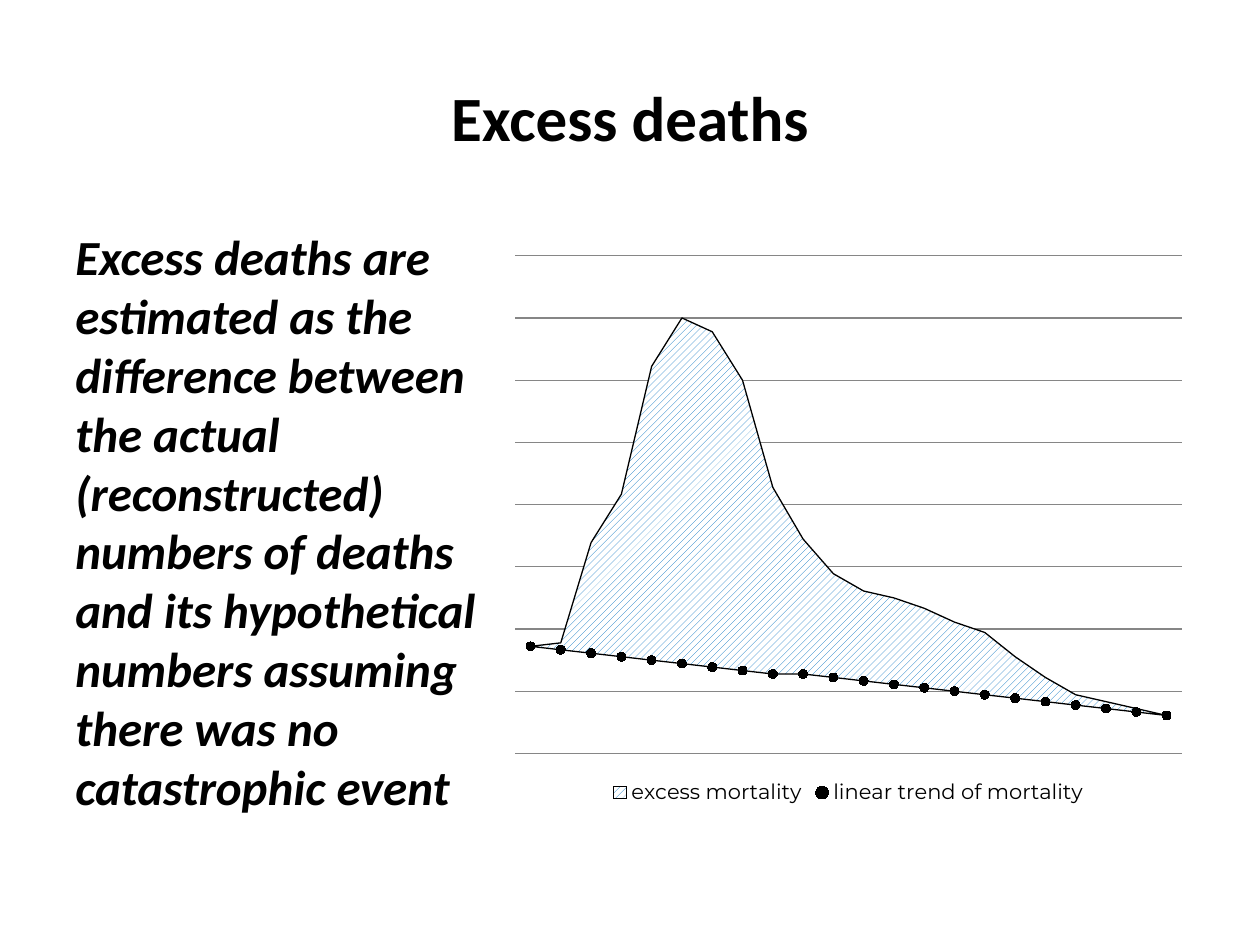
import pptx
import pptx.chart.data
import pptx.dml.color
import pptx.enum.chart
import pptx.enum.dml
import pptx.enum.text
import pptx.oxml
import pptx.oxml.ns
import pptx.util
from pptx.util import Inches

BLACK = pptx.dml.color.RGBColor(0x00, 0x00, 0x00)
WHITE = pptx.dml.color.RGBColor(0xFF, 0xFF, 0xFF)
HATCH_BLUE = pptx.dml.color.RGBColor(0x00, 0x70, 0xC0)
GRID_GRAY = pptx.dml.color.RGBColor(0x86, 0x86, 0x86)
CHART_NS = pptx.oxml.ns.nsdecls("c")

TREND = [*range(31, 22, -1), *range(23, 10, -1)]
EXCESS = [0, 2, 32, 47, 85, 100, 97, 84, 54, 39, 30,
          26, 25, 23, 20, 18, 12, 7, 3, 2, 1, 0]
GRID_STEP = 18
GRID_INTERVALS = 8


class SlideBuilder:
    text_font = "Calibri"
    legend_font = "Montserrat"

    def __init__(self, slide):
        self.slide = slide

    def text(self, wording, left, top, width, height, size, *, italic=False,
             align=pptx.enum.text.PP_ALIGN.LEFT,
             anchor=pptx.enum.text.MSO_ANCHOR.TOP):
        frame = self.slide.shapes.add_textbox(left, top, width, height).text_frame
        frame.word_wrap = True
        frame.vertical_anchor = anchor
        frame.text = wording
        paragraph = frame.paragraphs[0]
        paragraph.alignment = align
        font = paragraph.runs[0].font
        font.name = self.text_font
        font.size = pptx.util.Pt(size)
        font.bold = True
        font.italic = italic
        font.color.rgb = BLACK

    def mortality_chart(self, left, top, width, height):
        mortality = pptx.chart.data.CategoryChartData()
        mortality.categories = [str(n) for n in range(1, len(TREND) + 1)]
        mortality.add_series("Series 1", TREND)
        mortality.add_series("excess mortality", EXCESS)
        mortality.add_series("linear trend of mortality", TREND)
        chart = self.slide.shapes.add_chart(
            pptx.enum.chart.XL_CHART_TYPE.AREA_STACKED,
            left, top, width, height, mortality).chart
        chart.has_title = False
        chart.font.name = self.text_font
        chart.font.size = pptx.util.Pt(10)
        chart.font.color.rgb = BLACK

        self.move_last_series_to_line(chart)
        areas, line = chart.plots
        areas.vary_by_categories = False
        self.style_areas(*areas.series)
        self.style_trend(line.series[0])
        self.style_axes(chart)
        self.place_plot(chart)
        self.add_legend(chart)

    @staticmethod
    def move_last_series_to_line(chart):
        """Turn the stacked chart into an area and line combination."""
        areas = chart.plots[0]
        area_xml = areas.series[0].format and chart.element.find(
            ".//" + pptx.oxml.ns.qn("c:areaChart"))
        axis_ids = "".join(
            f'<c:axId val="{axis.get("val")}"/>'
            for axis in area_xml.findall(pptx.oxml.ns.qn("c:axId")))
        line_xml = pptx.oxml.parse_xml(
            f'<c:lineChart {CHART_NS}><c:grouping val="standard"/>'
            f'<c:varyColors val="0"/><c:marker val="1"/>{axis_ids}</c:lineChart>')
        trend_xml = area_xml.findall(pptx.oxml.ns.qn("c:ser"))[-1]
        line_xml.insert(2, trend_xml)
        area_xml.addnext(line_xml)

    @staticmethod
    def style_areas(base, excess):
        base.format.fill.background()
        base.format.line.fill.background()
        hatch = excess.format.fill
        hatch.patterned()
        hatch.pattern = pptx.enum.dml.MSO_PATTERN.WIDE_UPWARD_DIAGONAL
        hatch.fore_color.rgb = HATCH_BLUE
        hatch.back_color.rgb = WHITE
        excess.format.line.color.rgb = BLACK
        excess.format.line.width = pptx.util.Pt(0.75)

    @staticmethod
    def style_trend(trend):
        trend.smooth = False
        trend.format.line.fill.background()
        trend.marker.style = pptx.enum.chart.XL_MARKER_STYLE.CIRCLE
        trend.marker.size = 5
        trend.marker.format.fill.solid()
        trend.marker.format.fill.fore_color.rgb = BLACK
        trend.marker.format.line.color.rgb = BLACK

    @staticmethod
    def style_axes(chart):
        chart.category_axis.visible = False
        chart.category_axis.has_major_gridlines = False
        values = chart.value_axis
        values.visible = False
        values.minimum_scale = 0
        values.maximum_scale = GRID_STEP * GRID_INTERVALS
        values.major_unit = GRID_STEP
        values.has_major_gridlines = True
        values.major_gridlines.format.line.color.rgb = GRID_GRAY
        values.major_gridlines.format.line.width = pptx.util.Pt(0.75)
        for crossing in chart.element.iter(pptx.oxml.ns.qn("c:crossBetween")):
            crossing.set("val", "between")

    @staticmethod
    def place_plot(chart):
        plot_area = chart.element.find(".//" + pptx.oxml.ns.qn("c:plotArea"))
        for automatic in plot_area.findall(pptx.oxml.ns.qn("c:layout")):
            plot_area.remove(automatic)
        shares = {"x": 0.02, "y": 0.02, "w": 0.96, "h": 0.88}
        modes = "".join(f'<c:{side}Mode val="edge"/>' for side in "xy")
        sizes = "".join(f'<c:{side} val="{share}"/>'
                        for side, share in shares.items())
        plot_area.insert(0, pptx.oxml.parse_xml(
            f'<c:layout {CHART_NS}><c:manualLayout><c:layoutTarget val="inner"/>'
            f'{modes}{sizes}</c:manualLayout></c:layout>'))

    def add_legend(self, chart):
        chart.has_legend = True
        legend = chart.legend
        legend.position = pptx.enum.chart.XL_LEGEND_POSITION.BOTTOM
        legend.include_in_layout = False
        legend.font.name = self.legend_font
        legend.font.size = pptx.util.Pt(12)
        legend.font.color.rgb = BLACK
        legend_xml = chart.element.find(".//" + pptx.oxml.ns.qn("c:legend"))
        legend_xml.find(pptx.oxml.ns.qn("c:legendPos")).addnext(
            pptx.oxml.parse_xml(
                f'<c:legendEntry {CHART_NS}><c:idx val="0"/>'
                f'<c:delete val="1"/></c:legendEntry>'))


def main():
    deck = pptx.Presentation()
    deck.slide_width, deck.slide_height = Inches(10), Inches(7.5)
    builder = SlideBuilder(deck.slides.add_slide(deck.slide_layouts[6]))
    builder.text("Excess deaths",
                 Inches(0.5), Inches(0.3), Inches(9), Inches(1.25), 36,
                 align=pptx.enum.text.PP_ALIGN.CENTER,
                 anchor=pptx.enum.text.MSO_ANCHOR.MIDDLE)
    builder.text("Excess deaths are estimated as the difference between the "
                 "actual (reconstructed) numbers of deaths and its "
                 "hypothetical numbers assuming there was no catastrophic event",
                 Inches(0.5), Inches(1.75), Inches(3.56), Inches(4.95), 28,
                 italic=True)
    builder.mortality_chart(Inches(3.98), Inches(1.94), Inches(5.51), Inches(4.49))
    deck.save("out.pptx")


if __name__ == "__main__":
    main()
